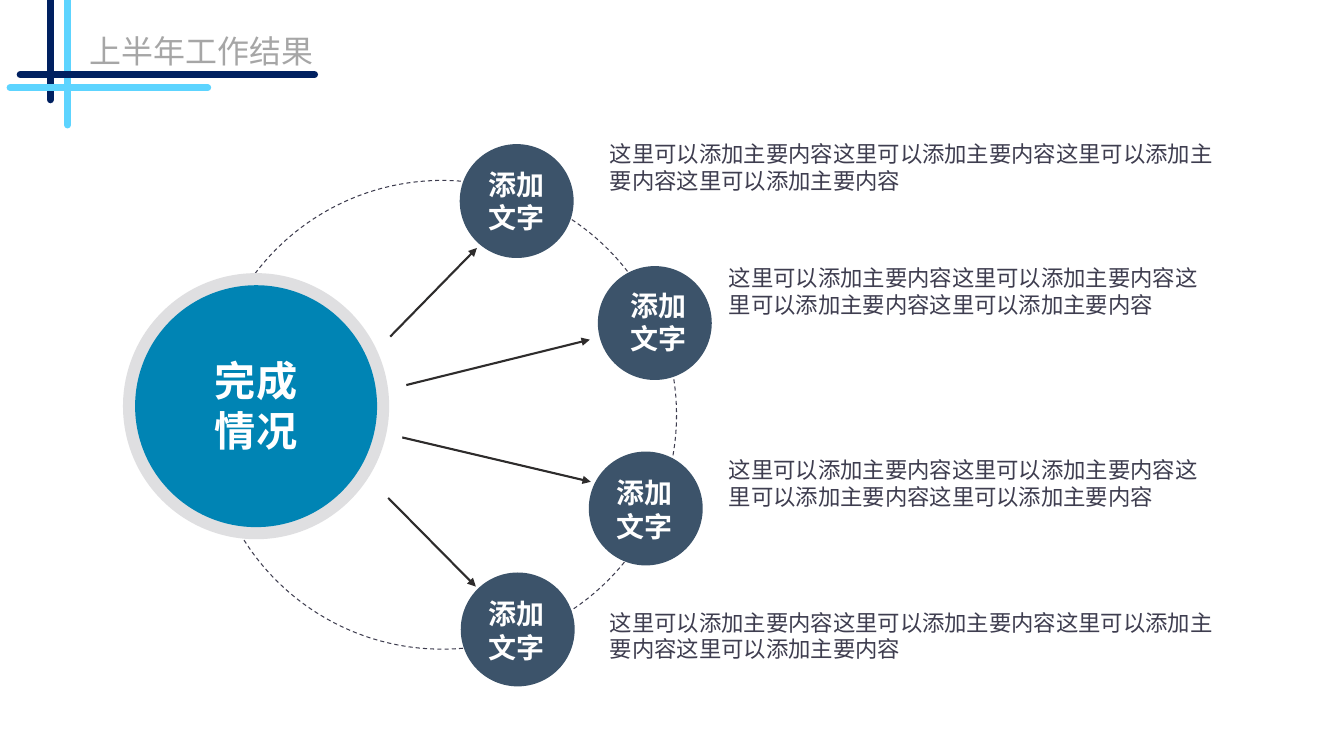
from lxml.etree import SubElement
from pptx import Presentation
from pptx.dml.color import RGBColor
from pptx.enum.dml import MSO_LINE
from pptx.enum.shapes import MSO_CONNECTOR, MSO_SHAPE
from pptx.enum.text import MSO_ANCHOR, MSO_AUTO_SIZE, PP_ALIGN
from pptx.oxml.ns import qn
from pptx.util import Emu, Pt

EMU_PER_PX = 9144  # 100 px to the inch
FONT = "Noto Sans CJK SC"
LINE_HEIGHT = 1.2

NAVY, SKY, BLUE, SLATE = "002060", "5DD4FF", "0084B4", "3C536A"
RING, INK, ARROW, TITLE_GREY, WHITE = "DFDFE1", "3E3D4F", "2E2C2C", "A6A6A6", "FFFFFF"

TITLE = "上半年工作结果"
HUB_LABEL = "完成情况"
NODE_LABEL = "添加文字"
DETAIL = "这里可以添加主要内容" * 4

NODE_SIZE = 113
# circle left and top, label left and top
NODES = [
    (456, 143, 468, 161),
    (593, 264, 609, 281),
    (584, 448, 595, 467),
    (457, 568, 468, 587),
]
# left, top, width
DETAILS = [(595, 134, 639), (713, 257, 495), (713, 448, 495), (595, 599, 639)]
# from the hub to a node
ARROWS = [
    (387, 334, 473, 246),
    (403, 382, 585, 337),
    (399, 434, 586, 478),
    (385, 494, 472, 582),
]
TITLE_BARS = [
    (50, 0, 50, 99, NAVY),
    (67, 0, 67, 124, SKY),
    (20, 74, 312, 74, NAVY),
    (10, 87, 206, 87, SKY),
]


def px(*lengths):
    return [Emu(length * EMU_PER_PX) for length in lengths]


def rgb(color):
    return RGBColor.from_string(color)


def write(frame, text, size, color, align=PP_ALIGN.LEFT, bold=False):
    paragraph = frame.paragraphs[0]
    paragraph.alignment = align
    paragraph.line_spacing = Pt(round(size * LINE_HEIGHT, 1))
    run = paragraph.add_run()
    run.text = text
    run.font.size = Pt(size)
    run.font.bold = bold
    run.font.color.rgb = rgb(color)
    run.font.name = FONT
    SubElement(run.font._element, qn("a:ea"), typeface=FONT)


def add_text(shapes, left, top, width, height, text, size, color, **style):
    frame = shapes.add_textbox(*px(left, top, width, height)).text_frame
    frame.word_wrap = True
    frame.auto_size = MSO_AUTO_SIZE.SHAPE_TO_FIT_TEXT
    write(frame, text, size, color, **style)


def add_circle(shapes, left, top, size, fill=None):
    circle = shapes.add_shape(MSO_SHAPE.OVAL, *px(left, top, size, size))
    circle.shadow.inherit = False
    if fill:
        circle.fill.solid()
        circle.fill.fore_color.rgb = rgb(fill)
        circle.line.fill.background()
    else:
        circle.fill.background()
    return circle


def add_line(shapes, x1, y1, x2, y2, color, width):
    """Draw a straight line and return its a:ln element."""
    line = shapes.add_connector(MSO_CONNECTOR.STRAIGHT, *px(x1, y1, x2, y2))
    line.line.color.rgb = rgb(color)
    line.line.width = Pt(width)
    properties = line._element.spPr
    SubElement(properties, qn("a:effectLst"))
    return properties.find(qn("a:ln"))


def add_arrow(shapes, *ends):
    stroke = add_line(shapes, *ends, ARROW, 1.5)
    SubElement(stroke, qn("a:tailEnd"), type="triangle")


def add_title_bar(shapes, *ends_and_color):
    add_line(shapes, *ends_and_color, 5).set("cap", "rnd")


def add_title(title):
    title.left, title.top, title.width, title.height = px(89, 31, 409, 38)
    frame = title.text_frame
    frame.margin_left = frame.margin_top = frame.margin_right = frame.margin_bottom = 0
    frame.vertical_anchor = MSO_ANCHOR.MIDDLE
    frame.auto_size = MSO_AUTO_SIZE.NONE
    write(frame, TITLE, 22.8, TITLE_GREY)


def add_orbit(shapes):
    orbit = add_circle(shapes, 206, 179, 465)
    orbit.line.color.rgb = rgb(INK)
    orbit.line.width = Pt(0)
    orbit.line.dash_style = MSO_LINE.DASH


def add_hub(shapes):
    add_circle(shapes, 122, 271, 264, RING)
    add_circle(shapes, 134, 283, 240, BLUE)
    add_text(shapes, 189, 348, 130, 109, HUB_LABEL, 29.4, WHITE,
             align=PP_ALIGN.CENTER, bold=True)


def add_node(shapes, left, top, label_left, label_top):
    node = shapes.add_group_shape().shapes
    add_circle(node, left, top, NODE_SIZE, SLATE)
    add_text(node, label_left, label_top, 89, 77, NODE_LABEL, 20, WHITE,
             align=PP_ALIGN.CENTER, bold=True)


def main():
    deck = Presentation()
    deck.slide_width, deck.slide_height = px(1333, 750)
    slide = deck.slides.add_slide(deck.slide_layouts.get_by_name("Title Only"))
    shapes = slide.shapes

    add_title(shapes.title)
    add_orbit(shapes)
    for ends in ARROWS:
        add_arrow(shapes, *ends)
    add_hub(shapes)
    for node in NODES:
        add_node(shapes, *node)
    for left, top, width in DETAILS:
        add_text(shapes, left, top, width, 64, DETAIL, 16, INK)
    for bar in TITLE_BARS:
        add_title_bar(shapes, *bar)

    deck.save("out.pptx")


if __name__ == "__main__":
    main()
